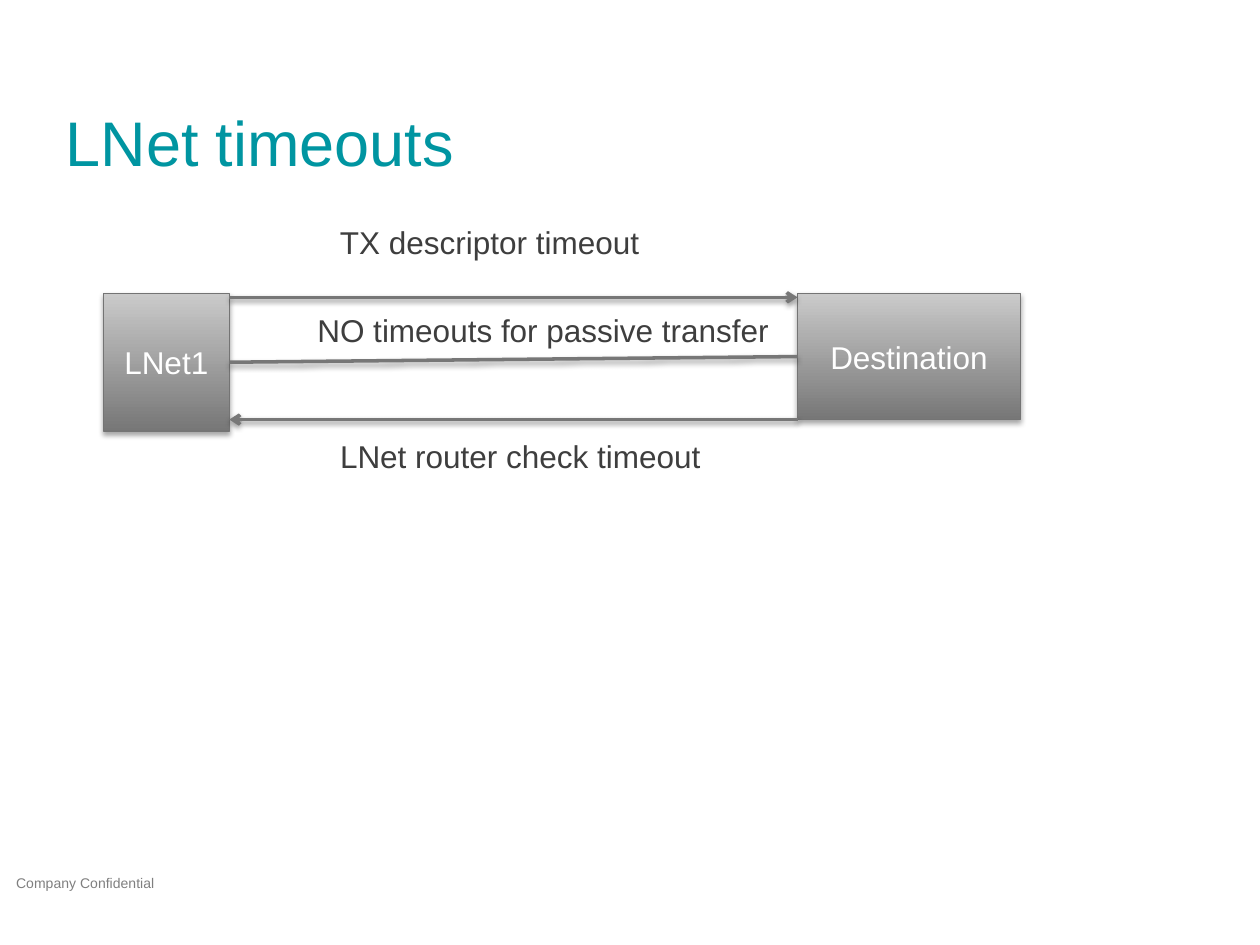
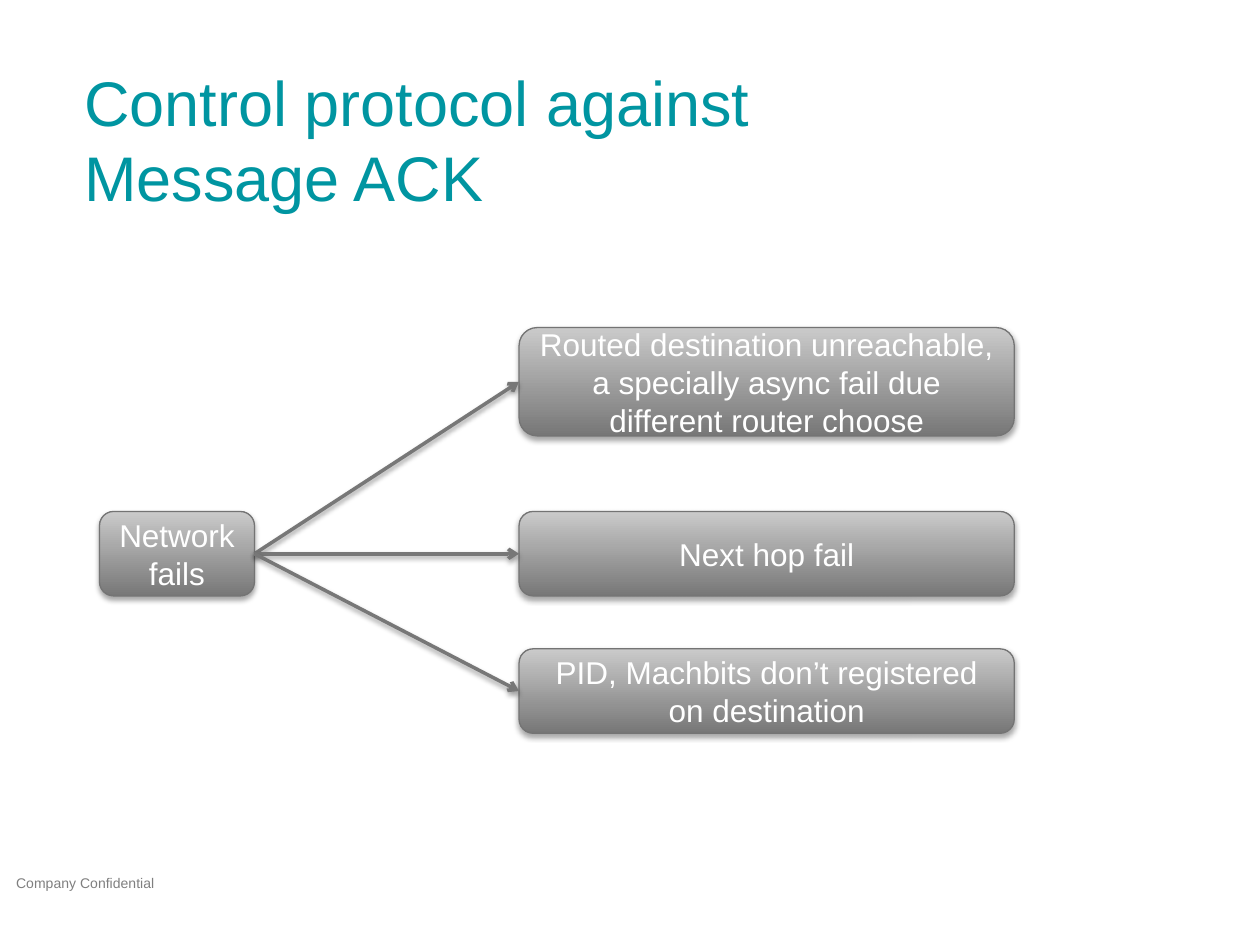
from lxml import etree
from pptx import Presentation
from pptx.dml.color import RGBColor
from pptx.enum.shapes import MSO_CONNECTOR, MSO_SHAPE
from pptx.enum.text import MSO_ANCHOR, MSO_AUTO_SIZE, PP_ALIGN
from pptx.oxml.ns import qn
from pptx.util import Inches, Pt

RECTANGLE = MSO_SHAPE.RECTANGLE
ROUNDED = MSO_SHAPE.FLOWCHART_ALTERNATE_PROCESS
STRAIGHT = MSO_CONNECTOR.STRAIGHT
MIDDLE = MSO_ANCHOR.MIDDLE
TOP = MSO_ANCHOR.TOP
NO_AUTOFIT = MSO_AUTO_SIZE.NONE
LEFT, CENTER = PP_ALIGN.LEFT, PP_ALIGN.CENTER
LEFT_SITE, RIGHT_SITE = 1, 3

FONT = "Arial"
TEAL, WHITE, TEXT, MUTED = "0095A1", "FFFFFF", "3E3E3E", "7F7F7F"
DARK, LIGHT, OUTLINE = "777777", "CACACA", "747474"
TITLE_STYLE = {"size": 36, "color": TEAL, "align": LEFT}
NODE_STYLE = {"size": 18, "color": WHITE, "align": CENTER}
LABEL_STYLE = {"size": 18, "color": TEXT, "align": LEFT}
FOOTER_STYLE = {"size": 8, "color": MUTED, "align": LEFT}


def rgb(value):
    return RGBColor.from_string(value)


def write(shape, text, style, **frame_format):
    frame = shape.text_frame
    for name, value in frame_format.items():
        setattr(frame, name, value)
    paragraph = frame.paragraphs[0]
    paragraph.text = text
    paragraph.alignment = style["align"]
    font = paragraph.runs[0].font
    for name, value in {"name": FONT, "size": Pt(style["size"])}.items():
        setattr(font, name, value)
    font.color.rgb = rgb(style["color"])


def add_shadow(shape, distance, opacity):
    """Give a shape or connector a soft shadow straight below it."""
    properties = shape._element.spPr
    effects = properties.find(qn("a:effectLst"))
    if effects is None:
        effects = etree.SubElement(properties, qn("a:effectLst"))
    shadow = etree.SubElement(effects, qn("a:outerShdw"), blurRad=str(Pt(3.1)),
                              dist=str(Pt(distance)), dir="5400000", rotWithShape="0")
    color = etree.SubElement(shadow, qn("a:srgbClr"), val="000000")
    etree.SubElement(color, qn("a:alpha"), val=str(opacity * 1000))


def add_node(slide, kind, text, left, top, width, height):
    node = slide.shapes.add_shape(kind, Inches(left), Inches(top),
                                  Inches(width), Inches(height))
    node.fill.gradient()
    node.fill.gradient_angle = 90
    for stop, color in zip(node.fill.gradient_stops, (DARK, LIGHT)):
        stop.color.rgb = rgb(color)
    node.line.color.rgb = rgb(OUTLINE)
    node.line.width = Pt(0.75)
    node.shadow.inherit = False
    add_shadow(node, 1.8, 35)
    write(node, text, NODE_STYLE, word_wrap=True, vertical_anchor=MIDDLE)
    return node


def add_line(slide, start=(0, 0), end=(0, 0), arrow=True):
    line = slide.shapes.add_connector(STRAIGHT, *map(Inches, start + end))
    line.line.color.rgb = rgb(DARK)
    line.line.width = Pt(2)
    if arrow:
        etree.SubElement(line.line._get_or_add_ln(), qn("a:tailEnd"), type="arrow")
    add_shadow(line, 1.6, 38)
    return line


def link(slide, source, target, arrow=True):
    """Join the right side of source to the left side of target."""
    line = add_line(slide, arrow=arrow)
    line.begin_connect(source, RIGHT_SITE)
    line.end_connect(target, LEFT_SITE)


def add_text(slide, text, style, left, top, width, height, wrap=False):
    box = slide.shapes.add_textbox(Inches(left), Inches(top), Inches(width), Inches(height))
    write(box, text, style, word_wrap=wrap, vertical_anchor=TOP)


def add_titled_slide(presentation, title_text, left, top, width, height):
    slide = presentation.slides.add_slide(presentation.slide_layouts[5])
    add_text(slide, "Company Confidential", FOOTER_STYLE, 0.03, 6.89, 1.44, 0.24)
    title = slide.shapes.title
    bounds = {"left": left, "top": top, "width": width, "height": height}
    for name, value in bounds.items():
        setattr(title, name, Inches(value))
    margins = {f"margin_{side}": Inches(0.1) for side in ("left", "top", "right", "bottom")}
    write(title, title_text, TITLE_STYLE, word_wrap=True, vertical_anchor=MIDDLE,
          auto_size=NO_AUTOFIT, **margins)
    return slide


def add_timeout_diagram(slide, left, top):
    source_width, destination_left = 1, 5.51
    source = add_node(slide, RECTANGLE, "LNet1", left, top, source_width, 1.09)
    destination = add_node(slide, RECTANGLE, "Destination",
                           left + destination_left, top, 1.77, 1)
    near, far = left + source_width, left + destination_left
    add_line(slide, (near, top + 0.03), (far, top + 0.03))
    add_line(slide, (far, top + 1), (near, top + 1))
    link(slide, source, destination, arrow=False)
    for text, x, y, width in (
        ("TX descriptor timeout", 1.78, -0.61, 2.6),
        ("NO timeouts for passive transfer", 1.6, 0.09, 3.82),
        ("LNet router check timeout", 1.78, 1.09, 3.09),
    ):
        add_text(slide, text, LABEL_STYLE, left + x, top + y, width, 0.4)


def add_failure_tree(slide, left, top):
    row_height = 0.67
    cause = add_node(slide, ROUNDED, "Network fails", left, top + 1.46, 1.23, row_height)
    for text, y, height in (
        ("Routed destination unreachable, a specially async fail due different router choose",
         0, 0.86),
        ("Next hop fail", 1.46, row_height),
        ("PID, Machbits don’t registered on destination", 2.55, row_height),
    ):
        outcome = add_node(slide, ROUNDED, text, left + 3.33, top + y, 3.93, height)
        link(slide, cause, outcome)


def main():
    presentation = Presentation()
    presentation.slide_width = Inches(10)
    presentation.slide_height = Inches(7.5)
    timeouts = add_titled_slide(presentation, "LNet timeouts", 0.42, 0.68, 6.59, 0.89)
    add_timeout_diagram(timeouts, 0.82, 2.33)
    control = add_titled_slide(presentation, "Control protocol against Message ACK",
                               0.57, 0.72, 7.36, 0.76)
    add_failure_tree(control, 0.79, 2.6)
    presentation.save("out.pptx")


if __name__ == "__main__":
    main()
